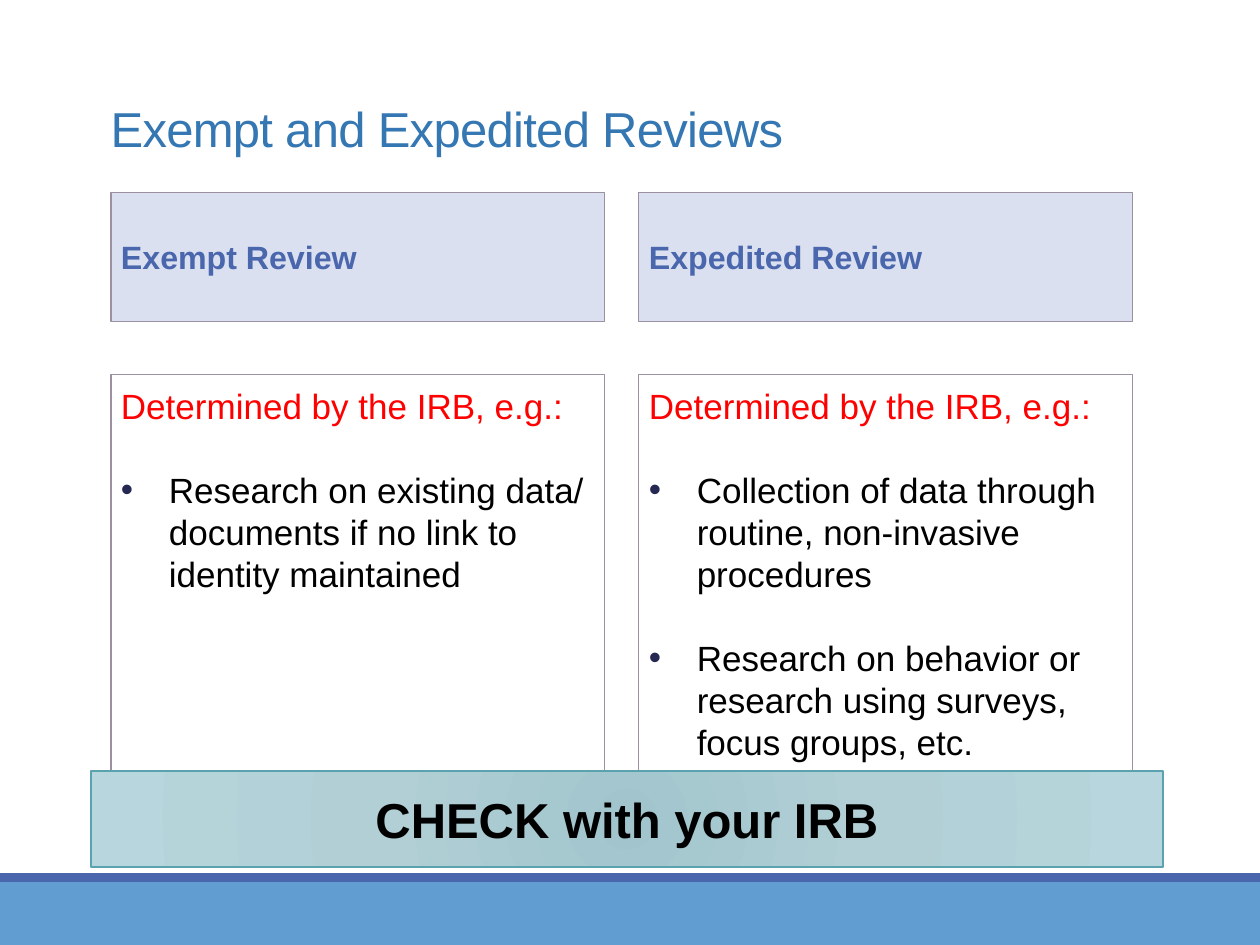
from pptx import Presentation
from pptx.dml.color import RGBColor
from pptx.enum.shapes import MSO_SHAPE
from pptx.enum.text import MSO_ANCHOR, PP_ALIGN
from pptx.oxml import parse_xml
from pptx.oxml.ns import nsdecls
from pptx.util import Inches, Pt

# Content
TITLE = "Exempt and Expedited Reviews"
LEAD = "Determined by the IRB, e.g.:"
COLS = [
    ("Exempt Review",
     ["Research on existing data/ documents if no link to identity maintained"]),
    ("Expedited Review",
     ["Collection of data through routine, non-invasive procedures",
      "Research on behavior or research using surveys, focus groups, etc."]),
]
CHECK = "CHECK with your IRB"

# Layout and formats
WIDE, HIGH = 10, 7.5
LEFT, COL, GAP = 0.88, 3.92, 0.27
HEAD, BODY = (1.53, 1.02), (2.97, 3.78)    # top, height
BANDS = [(7, 0.5, "629DD1"), (6.93, 0.07, "4A66AC")]
STOPS = [(0, "A2C5CD"), (45, "B1CFD5"), (100, "B7D6DD")]
EDGE = "9D90A0"
FONTS = {
    "title": ({"size": Pt(28)}, "3477B2"),
    "head": ({"size": Pt(18.4), "bold": True}, "4A66AC"),
    "lead": ({"size": Pt(20)}, "FF0000"),
    "item": ({"size": Pt(20)}, "000000"),
    "check": ({"size": Pt(28), "bold": True}, "000000"),
}


def color(code):
    return RGBColor.from_string(code)


def box(x, y, w, h, fill=None, edge=None, width=0.75, pad=None):
    shape = slide.shapes.add_shape(MSO_SHAPE.RECTANGLE, *map(Inches, (x, y, w, h)))
    shape.shadow.inherit = False
    if fill:
        shape.fill.solid()
        shape.fill.fore_color.rgb = color(fill)
    if edge:
        shape.line.color.rgb = color(edge)
        shape.line.width = Pt(width)
    else:
        shape.line.fill.background()
    frame = shape.text_frame
    frame.word_wrap = True
    if pad:
        for side in ("left", "top", "right", "bottom"):
            setattr(frame, "margin_" + side, Inches(pad))
    return shape


def write(frame, text, style, first=True, align=PP_ALIGN.LEFT):
    para = frame.paragraphs[0] if first else frame.add_paragraph()
    para.alignment = align
    run = para.add_run()
    run.text = text
    form, tint = FONTS[style]
    for key, val in {"name": "Arial", **form}.items():
        setattr(run.font, key, val)
    run.font.color.rgb = color(tint)
    return para


def bullet(para):
    props = para._p.get_or_add_pPr()
    props.set("marL", str(Inches(0.38)))
    props.set("indent", str(-Inches(0.38)))
    for xml in ('<a:buClr %s><a:srgbClr val="242852"/></a:buClr>',
                '<a:buFont %s typeface="Arial"/>',
                '<a:buChar %s char="•"/>'):
        props.append(parse_xml(xml % nsdecls("a")))


def radial(shape):
    stops = "".join(f'<a:gs pos="{p * 1000}"><a:srgbClr val="{c}"/></a:gs>'
                    for p, c in STOPS)
    grad = parse_xml(
        f'<a:gradFill {nsdecls("a")} rotWithShape="1"><a:gsLst>{stops}</a:gsLst>'
        '<a:path path="circle"><a:fillToRect l="100000" t="100000" '
        'r="100000" b="100000"/></a:path></a:gradFill>')
    shape._element.spPr.find(".//{*}prstGeom").addnext(grad)


deck = Presentation()
deck.slide_width, deck.slide_height = Inches(WIDE), Inches(HIGH)
slide = deck.slides.add_slide(deck.slide_layouts[6])

# Footer bands
for top, high, fill in BANDS:
    box(0, top, WIDE, high, fill)

# Title
frame = slide.shapes.add_textbox(*map(Inches, (0.78, 0.42, 8.4, 1.26))).text_frame
frame.word_wrap = True
frame.vertical_anchor = MSO_ANCHOR.MIDDLE
para = write(frame, TITLE, "title")
para.line_spacing = 0.85
para.runs[0].font._element.set("spc", "-40")

# Review columns
for i, (name, items) in enumerate(COLS):
    x = LEFT + i * (COL + GAP)
    head = box(x, HEAD[0], COL, HEAD[1], "DAE0EF", EDGE, pad=0.08).text_frame
    head.vertical_anchor = MSO_ANCHOR.MIDDLE
    write(head, name, "head")
    body = box(x, BODY[0], COL, BODY[1], "FFFFFF", EDGE, pad=0.08).text_frame
    body.vertical_anchor = MSO_ANCHOR.TOP
    paras = [write(body, LEAD, "lead")]
    for item in items:
        para = write(body, item, "item", first=False)
        para.space_before = Pt(12)
        paras.append(para)
    for para in paras:
        para.space_after = Pt(12)
        para.line_spacing = Pt(24)
    for para in paras[1:]:
        bullet(para)

# Closing banner
banner = box(0.72, 6.12, 8.51, 0.76, edge="5AA2AE", width=1)
radial(banner)
banner.text_frame.vertical_anchor = MSO_ANCHOR.MIDDLE
write(banner.text_frame, CHECK, "check", align=PP_ALIGN.CENTER)

deck.save("out.pptx")
